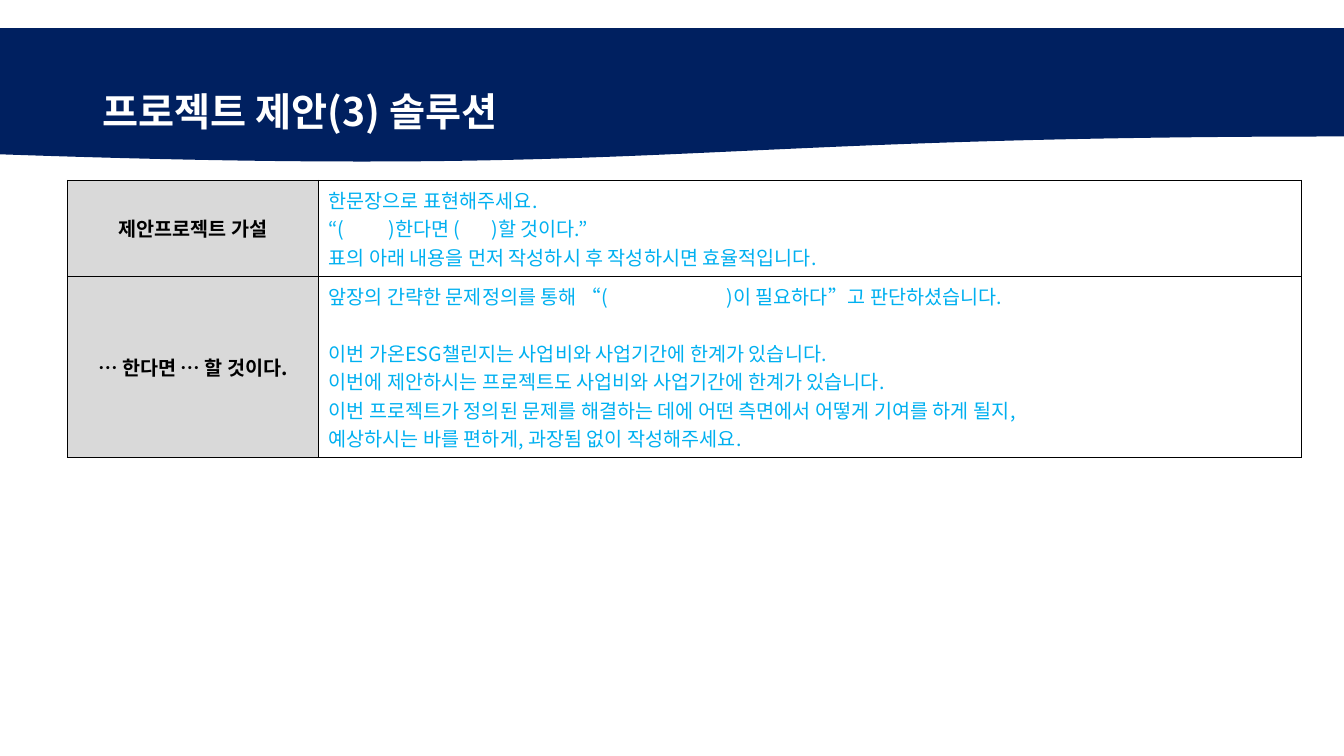
from lxml import etree
from pptx import Presentation
from pptx.dml.color import RGBColor
from pptx.enum.shapes import MSO_SHAPE
from pptx.enum.text import MSO_ANCHOR, MSO_AUTO_SIZE, PP_ALIGN
from pptx.oxml.ns import qn
from pptx.util import Inches, Pt

WAVE = MSO_SHAPE.FLOWCHART_DOCUMENT
MIDDLE = MSO_ANCHOR.MIDDLE
NO_FIT = MSO_AUTO_SIZE.NONE
LEFT, CENTER = PP_ALIGN.LEFT, PP_ALIGN.CENTER
TITLE_ONLY = 5

COLORS = {"navy": "002060", "white": "FFFFFF", "black": "000000",
          "gray": "D9D9D9", "guide": "00B0F0"}
BORDER_SIDES = ("a:lnL", "a:lnR", "a:lnT", "a:lnB")

# Each row: heading, guide lines, index of the guide line that follows a gap
ROWS = [
    ("제안프로젝트 가설",
     ["한문장으로 표현해주세요.",
      "“(          )한다면 (       )할 것이다.”",
      "표의 아래 내용을 먼저 작성하시 후 작성하시면 효율적입니다."], None),
    ("… 한다면 … 할 것이다.",
     ["앞장의 간략한 문제정의를 통해 “(                           )이 필요하다”고 판단하셨습니다.",
      "이번 가온ESG챌린지는 사업비와 사업기간에 한계가 있습니다.",
      "이번에 제안하시는 프로젝트도 사업비와 사업기간에 한계가 있습니다.",
      "이번 프로젝트가 정의된 문제를 해결하는 데에 어떤 측면에서 어떻게 기여를 하게 될지,",
      "예상하시는 바를 편하게, 과장됨 없이 작성해주세요."], 1),
]


class SlideBuilder:
    font_name = "Noto Sans CJK KR"
    body_size = 14
    title_size = 28
    gap = Pt(20.3)

    def __init__(self, page):
        self.page = page

    def color(self, name):
        return RGBColor.from_string(COLORS[name])

    def format_para(self, para, size, color, bold, align):
        para.alignment = align
        font = para.font
        font.name, font.size, font.bold = self.font_name, Pt(size), bold
        font.color.rgb = self.color(color)
        defaults = para._p.pPr.find(qn("a:defRPr"))
        etree.SubElement(defaults, qn("a:ea"), typeface=self.font_name)

    def band(self, left, top, width, height):
        band = self.page.shapes.add_shape(
            WAVE, Inches(left), Inches(top), Inches(width), Inches(height))
        band.shadow.inherit = False
        band.fill.solid()
        band.fill.fore_color.rgb = self.color("navy")
        band.line.fill.background()

    def title(self, text, left, top, width, height):
        title = self.page.shapes.title
        title.left, title.top = Inches(left), Inches(top)
        title.width, title.height = Inches(width), Inches(height)
        frame = title.text_frame
        frame.text = text
        frame.auto_size = NO_FIT
        frame.vertical_anchor = MIDDLE
        para = frame.paragraphs[0]
        para.line_spacing = 0.9
        self.format_para(para, self.title_size, "white", True, LEFT)
        # Bring the title in front of the band
        self.page.shapes._spTree.append(title._element)

    def border(self, cell):
        properties = cell._tc.get_or_add_tcPr()
        for position, side in enumerate(BORDER_SIDES):
            line = etree.Element(qn(side), w=str(Pt(1)))
            fill = etree.SubElement(line, qn("a:solidFill"))
            etree.SubElement(fill, qn("a:srgbClr"), val=COLORS["black"])
            properties.insert(position, line)

    def fill_cell(self, cell, lines, color, bold, align, gap_before=None):
        cell.vertical_anchor = MIDDLE
        cell.text = "\n".join(lines)
        for index, para in enumerate(cell.text_frame.paragraphs):
            self.format_para(para, self.body_size, color, bold, align)
            if index == gap_before:
                para.space_before = self.gap
        self.border(cell)

    def table(self, rows, left, top, widths, heights):
        table = self.page.shapes.add_table(
            len(rows), len(widths), Inches(left), Inches(top),
            Inches(sum(widths)), Inches(sum(heights))).table
        table.first_row = table.horz_banding = False
        for column, width in zip(table.columns, widths):
            column.width = Inches(width)
        for index, (heading, guide, gap_before) in enumerate(rows):
            table.rows[index].height = Inches(heights[index])
            label, content = table.cell(index, 0), table.cell(index, 1)
            label.fill.solid()
            label.fill.fore_color.rgb = self.color("gray")
            content.fill.background()
            self.fill_cell(label, [heading], "black", True, CENTER)
            self.fill_cell(content, guide, "guide", False, LEFT, gap_before)


def main():
    deck = Presentation()
    deck.slide_width, deck.slide_height = Inches(13.33), Inches(7.5)
    page = deck.slides.add_slide(deck.slide_layouts[TITLE_ONLY])
    builder = SlideBuilder(page)
    builder.band(0, 0.28, 13.33, 1.34)
    builder.title("프로젝트 제안(3) 솔루션", 0.92, 0.4, 11.5, 1.45)
    builder.table(ROWS, 0.67, 1.79, widths=(2.49, 9.75), heights=(0.95, 1.8))
    deck.save("out.pptx")


if __name__ == "__main__":
    main()
